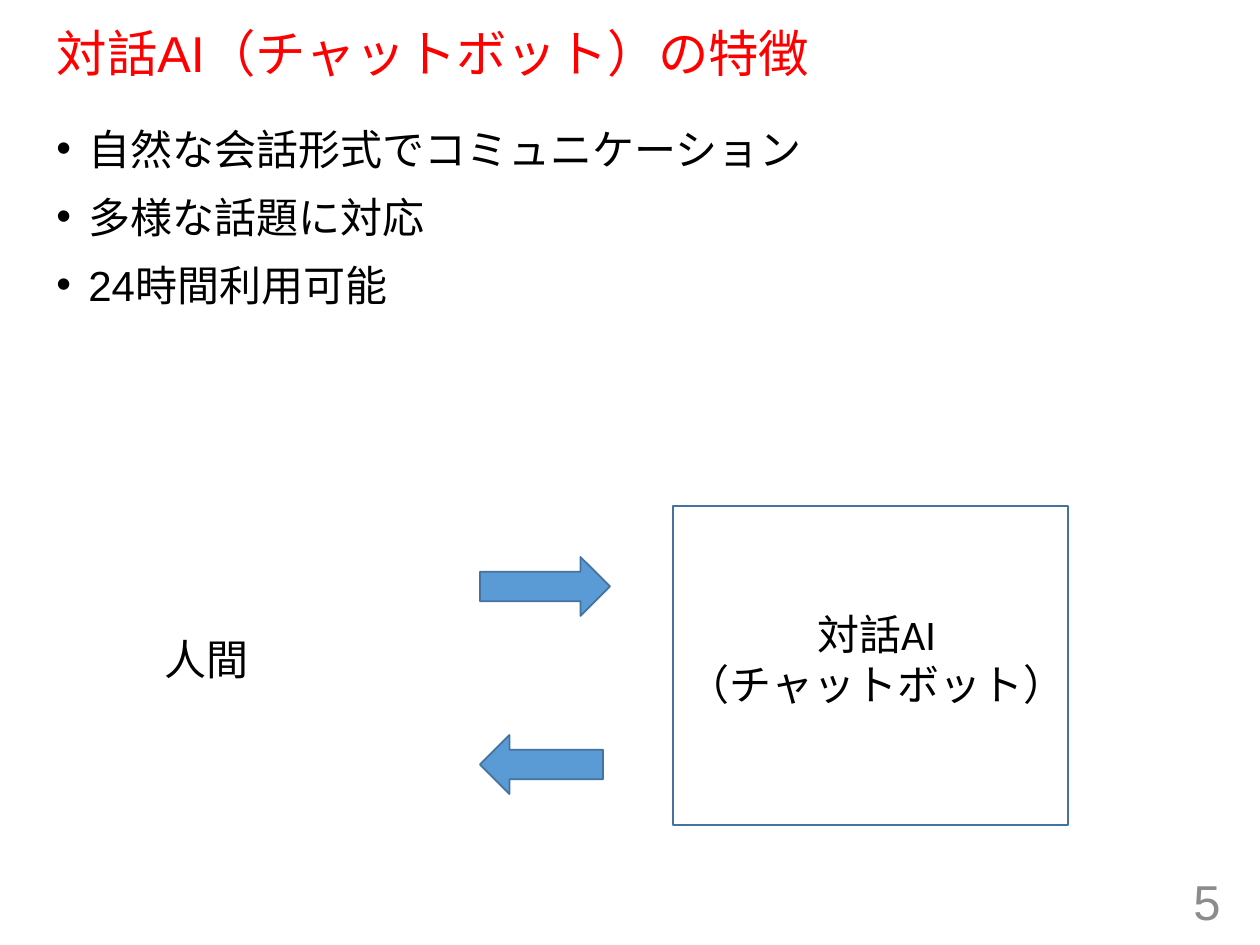
import pptx
import pptx.dml.color
import pptx.enum.shapes
import pptx.enum.text
import pptx.oxml.ns
import pptx.util
from lxml import etree

PX_PER_INCH = 126
ALIGN = pptx.enum.text.PP_ALIGN
ANCHOR = pptx.enum.text.MSO_ANCHOR
AUTO_SIZE = pptx.enum.text.MSO_AUTO_SIZE
SHAPE = pptx.enum.shapes.MSO_SHAPE
TITLE_ONLY = 5


def px(length):
    return pptx.util.Emu(round(length * 914400 / PX_PER_INCH))


def rgb(hex_string):
    return pptx.dml.color.RGBColor.from_string(hex_string)


def write_text(frame, lines, size=24, font="Calibri", color="000000", align=ALIGN.LEFT,
               anchor=ANCHOR.TOP, wrap=True, grow=False, line_spacing=1.0,
               space_before=0, bullet_indent=0):
    """Fill a text frame, one paragraph per line; a bullet indent in px adds bullets."""
    frame.word_wrap = wrap
    frame.auto_size = AUTO_SIZE.SHAPE_TO_FIT_TEXT if grow else AUTO_SIZE.NONE
    frame.vertical_anchor = anchor
    for index, line in enumerate(lines):
        paragraph = frame.add_paragraph() if index else frame.paragraphs[0]
        paragraph.alignment = align
        paragraph.line_spacing = line_spacing
        paragraph.space_before = pptx.util.Pt(space_before)
        run = paragraph.add_run()
        run.text = line
        run.font.size = pptx.util.Pt(size)
        run.font.name = font
        run.font.color.rgb = rgb(color)
        if bullet_indent:
            properties = paragraph._p.get_or_add_pPr()
            properties.set("marL", str(px(bullet_indent)))
            properties.set("indent", str(-px(bullet_indent)))
            bullet_font = etree.SubElement(properties, pptx.oxml.ns.qn("a:buFont"))
            bullet_font.set("typeface", "Arial")
            etree.SubElement(properties, pptx.oxml.ns.qn("a:buChar")).set("char", "•")


class SlideBuilder:
    """Holds the diagram style and the current slide."""

    outline = "43739E"
    arrow_fill = "5B9BD5"

    def __init__(self, slide):
        self.slide = slide

    def title(self, text, left, top, width, height, **style):
        heading = self.slide.shapes.title
        heading.left, heading.top = px(left), px(top)
        heading.width, heading.height = px(width), px(height)
        write_text(heading.text_frame, [text], **style)

    def text(self, lines, left, top, width, height, **style):
        box = self.slide.shapes.add_textbox(px(left), px(top), px(width), px(height))
        write_text(box.text_frame, lines, **style)

    def shape(self, kind, left, top, width, height, fill=None):
        shape = self.slide.shapes.add_shape(kind, px(left), px(top), px(width), px(height))
        shape.shadow.inherit = False
        if fill:
            shape.fill.solid()
            shape.fill.fore_color.rgb = rgb(fill)
        else:
            shape.fill.background()
        shape.line.color.rgb = rgb(self.outline)
        shape.line.width = pptx.util.Pt(1)

    def arrow(self, kind, left, top, width):
        self.shape(kind, left, top, width, 59, fill=self.arrow_fill)


def main():
    presentation = pptx.Presentation()
    presentation.slide_width = px(1260)
    presentation.slide_height = px(945)
    layout = presentation.slide_layouts[TITLE_ONLY]
    builder = SlideBuilder(presentation.slides.add_slide(layout))

    builder.title("対話AI（チャットボット）の特徴", 44, 24, 1166, 64, size=28.8, font="Arial",
                  color="FF0000", anchor=ANCHOR.MIDDLE, line_spacing=0.9)
    features = ["自然な会話形式でコミュニケーション", "多様な話題に対応", "24時間利用可能"]
    builder.text(features, 44, 117, 1166, 735, font="Arial", space_before=10, bullet_indent=32)
    builder.text(["5"], 949, 876, 284, 50, size=28, font="Arial", color="8C8C8C",
                 align=ALIGN.RIGHT, anchor=ANCHOR.MIDDLE)

    builder.shape(SHAPE.RECTANGLE, 673, 506, 395, 319)
    builder.text(["対話AI", "（チャットボット）"], 673, 602, 407, 115,
                 align=ALIGN.CENTER, wrap=False, grow=True)
    builder.text(["人間"], 152, 627, 111, 63, wrap=False, grow=True)
    builder.arrow(SHAPE.RIGHT_ARROW, 480, 557, 130)
    builder.arrow(SHAPE.LEFT_ARROW, 480, 735, 123)

    presentation.save("out.pptx")


if __name__ == "__main__":
    main()
